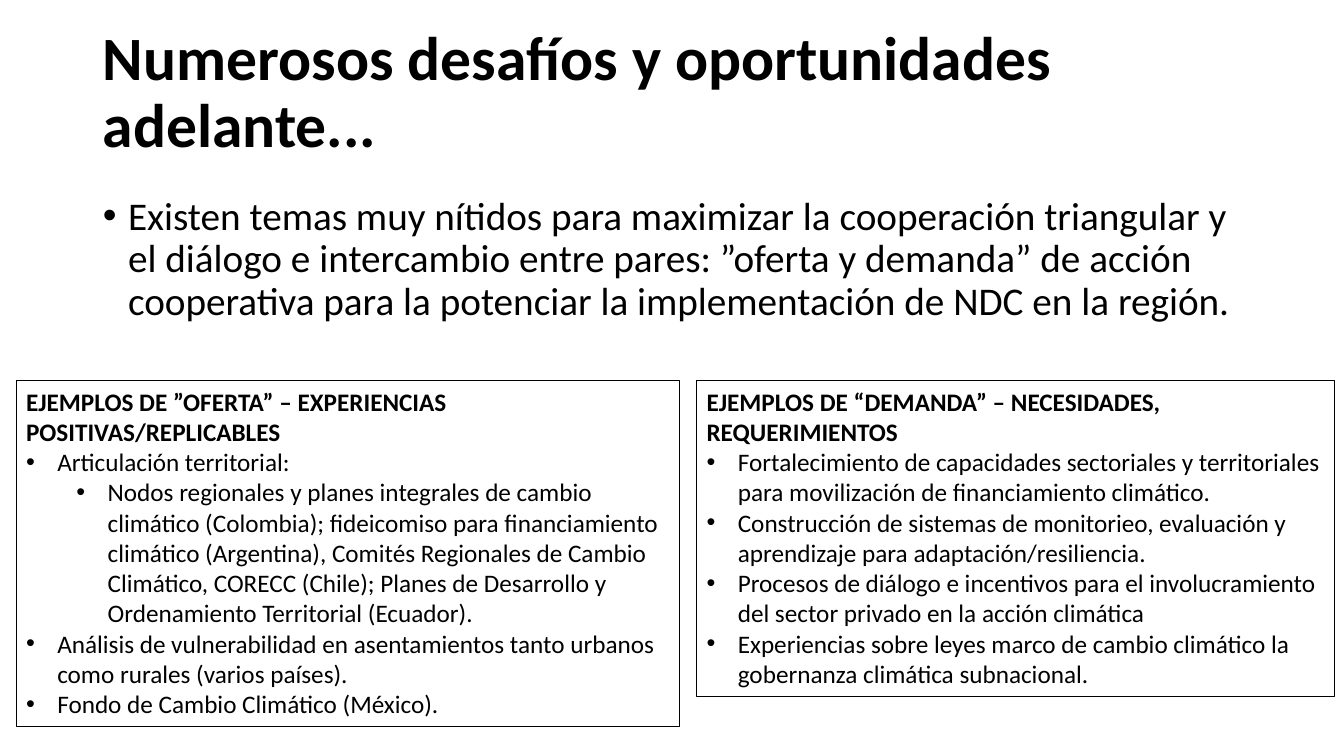
from lxml import etree
from pptx import Presentation
from pptx.dml.color import RGBColor
from pptx.enum.shapes import MSO_SHAPE
from pptx.enum.text import MSO_ANCHOR, MSO_AUTO_SIZE, PP_ALIGN
from pptx.oxml.ns import qn
from pptx.util import Inches, Pt

RECT = MSO_SHAPE.RECTANGLE
TOP, MIDDLE = MSO_ANCHOR.TOP, MSO_ANCHOR.MIDDLE
LEFT = PP_ALIGN.LEFT
NO_FIT, GROW = MSO_AUTO_SIZE.NONE, MSO_AUTO_SIZE.SHAPE_TO_FIT_TEXT
COLORS = {"text": "000000", "line": "000000"}
FONT = "Calibri"


def add_text(p, text, size, bold=False, spacing=1.0):
    p.alignment = LEFT
    p.line_spacing = spacing
    p.space_before = Pt(0)
    r = p.add_run()
    r.text = text
    r.font.name = FONT
    r.font.size = Pt(size)
    r.font.bold = bold
    r.font.color.rgb = RGBColor.from_string(COLORS["text"])


def add_bullet(p, margin, hanging):
    pPr = p._p.get_or_add_pPr()
    pPr.set("marL", str(Inches(margin)))
    pPr.set("indent", str(-Inches(hanging)))
    etree.SubElement(pPr, qn("a:buFont")).set("typeface", "Arial")
    etree.SubElement(pPr, qn("a:buChar")).set("char", "•")


prs = Presentation()
prs.slide_width, prs.slide_height = Inches(13.33), Inches(7.5)
s = prs.slides.add_slide(prs.slide_layouts[1])

# Title and main statement
title, body = s.shapes.title, s.placeholders[1]
for sp, top, height, anchor in ((title, 0.21, 1.45, MIDDLE), (body, 1.9, 1.41, TOP)):
    sp.left, sp.top = Inches(0.92), Inches(top)
    sp.width, sp.height = Inches(11.5), Inches(height)
    tf = sp.text_frame
    tf.word_wrap = True
    tf.auto_size = NO_FIT
    tf.vertical_anchor = anchor

add_text(title.text_frame.paragraphs[0],
         "Numerosos desafíos y oportunidades adelante...", 44, bold=True, spacing=0.9)
statement = body.text_frame.paragraphs[0]
add_bullet(statement, 0.25, 0.25)
add_text(statement,
         "Existen temas muy nítidos para maximizar la cooperación triangular y el diálogo "
         "e intercambio entre pares: ”oferta y demanda” de acción cooperativa para la "
         "potenciar la implementación de NDC en la región.", 28, spacing=0.9)

# Supply and demand boxes: left, width, height, heading, (level, text) items
boxes = [
    (0.16, 6.58, 3.43, "EJEMPLOS DE ”OFERTA” – EXPERIENCIAS POSITIVAS/REPLICABLES", [
        (0, "Articulación territorial:"),
        (1, "Nodos regionales y planes integrales de cambio climático (Colombia); "
            "fideicomiso para financiamiento climático (Argentina), Comités Regionales de "
            "Cambio Climático, CORECC (Chile); Planes de Desarrollo y Ordenamiento "
            "Territorial (Ecuador)."),
        (0, "Análisis de vulnerabilidad en asentamientos tanto urbanos como rurales "
            "(varios países)."),
        (0, "Fondo de Cambio Climático (México)."),
    ]),
    (6.91, 6.33, 3.13, "EJEMPLOS DE “DEMANDA” – NECESIDADES, REQUERIMIENTOS", [
        (0, "Fortalecimiento de capacidades sectoriales y territoriales para movilización "
            "de financiamiento climático."),
        (0, "Construcción de sistemas de monitorieo, evaluación y aprendizaje para "
            "adaptación/resiliencia."),
        (0, "Procesos de diálogo e incentivos para el involucramiento del sector privado "
            "en la acción climática"),
        (0, "Experiencias sobre leyes marco de cambio climático la gobernanza climática "
            "subnacional."),
    ]),
]
for left, width, height, heading, items in boxes:
    sp = s.shapes.add_shape(RECT, Inches(left), Inches(3.78), Inches(width), Inches(height))
    sp.shadow.inherit = False
    sp.fill.background()
    sp.line.color.rgb = RGBColor.from_string(COLORS["line"])
    sp.line.width = Pt(0.75)
    tf = sp.text_frame
    tf.word_wrap = True
    tf.auto_size = GROW
    tf.vertical_anchor = TOP
    add_text(tf.paragraphs[0], heading, 18, bold=True)
    for level, text in items:
        p = tf.add_paragraph()
        p.level = level
        add_bullet(p, 0.31 + 0.5 * level, 0.31)
        add_text(p, text, 18)

prs.save("out.pptx")
